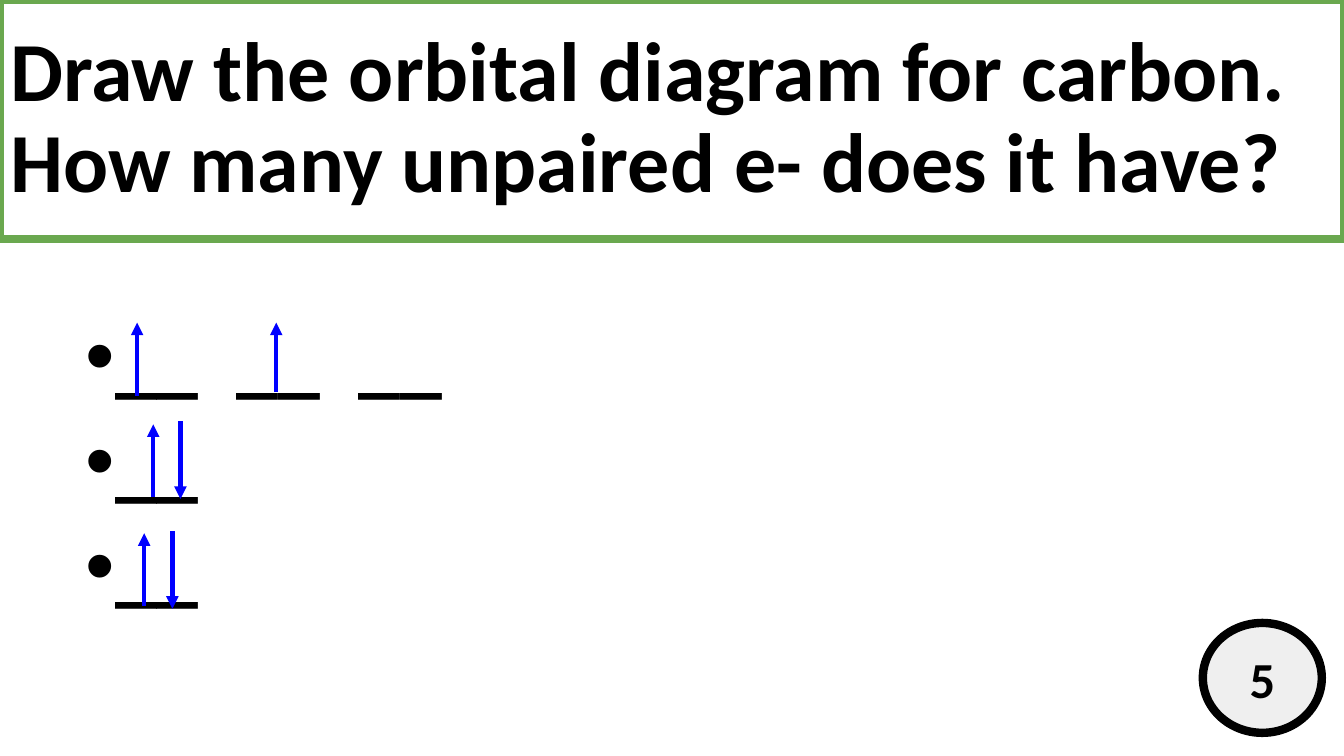
from lxml import etree
from pptx import Presentation
from pptx import util as u
from pptx.dml.color import RGBColor
from pptx.enum import shapes, text
from pptx.oxml.ns import qn

# Content, lengths in px (100 px to the inch)
PX = 9144
SLIDE = (1333, 750)
BLACK = RGBColor(0x00, 0x00, 0x00)
GREEN = RGBColor(0x6A, 0xA8, 0x4F)
BLUE = RGBColor(0x00, 0x00, 0xFF)
GREY = RGBColor(0xEF, 0xEF, 0xEF)

QUESTION = "Draw the orbital diagram for carbon. How many unpaired e- does it have?"
QUESTION_BOX = (0, 0, 1333, 237)
ORBITALS = ["__  __  __", "__", "__"]  # 2p, 2s, 1s
ORBITALS_BOX = (75, 308, 1137, 280)
BULLET_INDENT, BULLET_HANG = 25, -44
ELECTRONS = [  # x, y of the tail, y of the head
    (179, 418, 495), (152, 493, 421),  # 2s pair
    (171, 527, 604), (143, 601, 529),  # 1s pair
    (274, 389, 320), (136, 393, 320),  # 2p singles
]
NUMBER = "5"
NUMBER_BOX = (1193, 618, 118, 109)
NUMBER_INSET = 10


def px(*lengths):
    return [u.Emu(length * PX) for length in lengths]


def place(part, box):
    part.left, part.top, part.width, part.height = px(*box)


def outline(part, color, points):
    part.line.color.rgb = color
    part.line.width = u.Pt(points)


def apply(target, **values):
    for name, value in values.items():
        setattr(target, name, value)


def write(paragraph, words, size, **layout):
    run = paragraph.add_run()
    run.text = words
    apply(run.font, name="Calibri", size=u.Pt(size), bold=True)
    run.font.color.rgb = BLACK
    apply(paragraph, **layout)


def add_bullet(paragraph):
    props = paragraph._p.get_or_add_pPr()
    indent, hang = px(BULLET_INDENT, BULLET_HANG)
    props.set("marL", str(indent))
    props.set("indent", str(hang))
    color = etree.SubElement(props, qn("a:buClr"))
    etree.SubElement(color, qn("a:srgbClr"), val=str(BLACK))
    etree.SubElement(props, qn("a:buFont"), typeface="Arial")
    etree.SubElement(props, qn("a:buChar"), char="•")


def add_electron(slide, x, tail, head):
    electron = slide.shapes.add_connector(
        shapes.MSO_CONNECTOR.STRAIGHT, *px(x, tail, x, head))
    outline(electron, BLUE, 3)
    etree.SubElement(electron.line._get_or_add_ln(), qn("a:tailEnd"), type="triangle")
    etree.SubElement(electron._element.spPr, qn("a:effectLst"))


def main():
    deck = Presentation()
    deck.slide_width, deck.slide_height = px(*SLIDE)
    slide = deck.slides.add_slide(deck.slide_layouts[1])
    frame_format = dict(word_wrap=True, auto_size=text.MSO_AUTO_SIZE.NONE)

    # Question
    question = slide.shapes.title
    place(question, QUESTION_BOX)
    outline(question, GREEN, 6)
    apply(question.text_frame, vertical_anchor=text.MSO_ANCHOR.MIDDLE, **frame_format)
    write(question.text_frame.paragraphs[0], QUESTION, 60,
          alignment=text.PP_ALIGN.LEFT, line_spacing=0.9)

    # Orbitals
    orbitals = slide.placeholders[1]
    place(orbitals, ORBITALS_BOX)
    frame = orbitals.text_frame
    apply(frame, vertical_anchor=text.MSO_ANCHOR.TOP, **frame_format)
    for row, blanks in enumerate(ORBITALS):
        line = frame.add_paragraph() if row else frame.paragraphs[0]
        write(line, blanks, 60, line_spacing=0.9,
              space_before=u.Pt(10 if row else 0))
        add_bullet(line)

    # Electrons
    for electron in ELECTRONS:
        add_electron(slide, *electron)

    # Question number
    number = slide.shapes.add_shape(shapes.MSO_SHAPE.OVAL, *px(*NUMBER_BOX))
    number.shadow.inherit = False
    number.fill.solid()
    number.fill.fore_color.rgb = GREY
    outline(number, BLACK, 6)
    inset, = px(NUMBER_INSET)
    apply(number.text_frame, vertical_anchor=text.MSO_ANCHOR.MIDDLE,
          margin_left=inset, margin_right=inset,
          margin_top=inset, margin_bottom=inset, **frame_format)
    write(number.text_frame.paragraphs[0], NUMBER, 36,
          alignment=text.PP_ALIGN.CENTER)

    deck.save("out.pptx")


if __name__ == "__main__":
    main()
